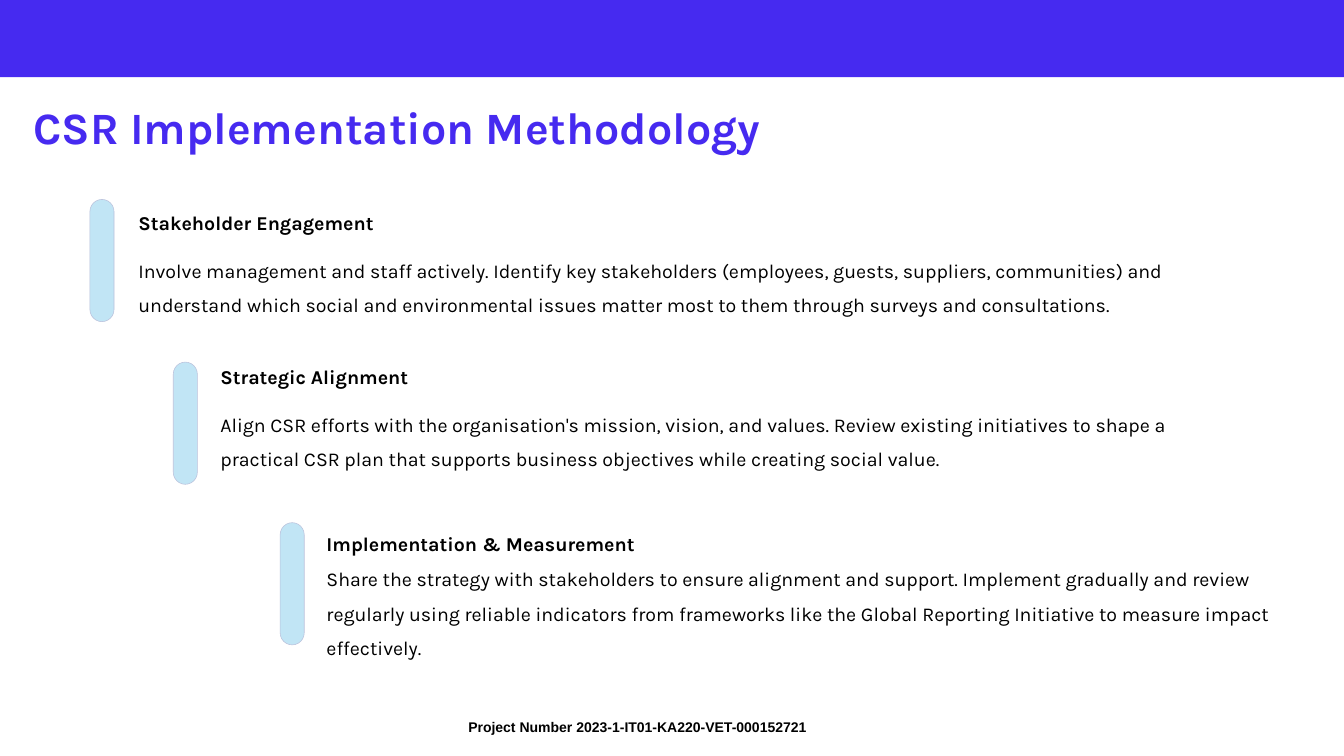
from dataclasses import dataclass

from pptx import Presentation
from pptx import util as u
from pptx.dml.color import RGBColor
from pptx.enum import shapes, text
from pptx.util import Cm, Pt


@dataclass(frozen=True)
class Theme:
    accent: RGBColor = RGBColor(0x46, 0x2A, 0xF0)
    bar: RGBColor = RGBColor(0xC1, 0xE5, 0xF5)
    bar_line: RGBColor = RGBColor(0xBB, 0xC2, 0xDC)
    ink: RGBColor = RGBColor(0, 0, 0)
    font: str = "Karla"
    footer_font: str = "Arial"
    title_size: u.Length = Pt(48)
    text_size: u.Length = Pt(21)
    footer_size: u.Length = Pt(15)
    heading_spacing: u.Length = Pt(37.5)
    body_spacing: u.Length = Pt(36.8)


@dataclass(frozen=True)
class Step:
    """One step of the staircase; lengths in centimetres."""
    heading: str
    body: str
    left: float
    top: float
    width: float
    body_drop: float
    bar_left: float
    bar_top: float


THEME = Theme()
SLIDE_W, SLIDE_H = 50.8, 28.58
BAR_W, BAR_H = 0.91, 4.62
HEADING_H, BODY_H = 1.35, 3.91

STEPS = [
    Step("Stakeholder Engagement",
         "Involve management and staff actively. Identify key stakeholders "
         "(employees, guests, suppliers, communities) and understand which "
         "social and environmental issues matter most to them through surveys "
         "and consultations.",
         5.23, 7.54, 38.74, 1.83, 3.4, 7.54),
    Step("Strategic Alignment",
         "Align CSR efforts with the organisation's mission, vision, and "
         "values. Review existing initiatives to shape a practical CSR plan "
         "that supports business objectives while creating social value.",
         8.33, 13.36, 37.16, 1.83, 6.55, 13.69),
    Step("Implementation & Measurement",
         "Share the strategy with stakeholders to ensure alignment and "
         "support. Implement gradually and review regularly using reliable "
         "indicators from frameworks like the Global Reporting Initiative to "
         "measure impact effectively.",
         12.34, 19.69, 37.16, 1.34, 10.59, 19.76),
]


def add_run(p, words: str, size: u.Length, color: RGBColor,
            bold: bool = False, font: str = THEME.font) -> None:
    r = p.add_run()
    r.text = words
    r.font.name = font
    r.font.size = size
    r.font.bold = bold
    r.font.color.rgb = color


def add_text(s, words: str, left: float, top: float, width: float,
             height: float, spacing: u.Length, bold: bool = False) -> None:
    tf = s.shapes.add_textbox(Cm(left), Cm(top), Cm(width), Cm(height)).text_frame
    tf.word_wrap = True
    tf.margin_left = tf.margin_top = tf.margin_right = tf.margin_bottom = 0
    p = tf.paragraphs[0]
    p.line_spacing = spacing
    add_run(p, words, THEME.text_size, THEME.ink, bold)


def add_step(s, step: Step) -> None:
    sp = s.shapes.add_shape(shapes.MSO_SHAPE.ROUNDED_RECTANGLE,
                            Cm(step.bar_left), Cm(step.bar_top),
                            Cm(BAR_W), Cm(BAR_H))
    sp.adjustments[0] = 0.5
    sp.shadow.inherit = False
    sp.fill.solid()
    sp.fill.fore_color.rgb = THEME.bar
    sp.line.color.rgb = THEME.bar_line
    sp.line.width = Pt(0.6)
    add_text(s, step.heading, step.left, step.top, step.width, HEADING_H,
             THEME.heading_spacing, bold=True)
    add_text(s, step.body, step.left, step.top + step.body_drop, step.width,
             BODY_H, THEME.body_spacing)


def add_banner(s) -> None:
    sp = s.shapes.add_shape(shapes.MSO_SHAPE.RECTANGLE, 0, 0,
                            Cm(SLIDE_W), Cm(2.92))
    sp.shadow.inherit = False
    sp.fill.solid()
    sp.fill.fore_color.rgb = THEME.accent
    sp.line.fill.background()


def add_title(s, words: str) -> None:
    sp = s.shapes.title
    sp.left, sp.top, sp.width, sp.height = Cm(1), Cm(3.05), Cm(43.82), Cm(3.71)
    tf = sp.text_frame
    tf.auto_size = text.MSO_AUTO_SIZE.NONE
    tf.vertical_anchor = text.MSO_ANCHOR.MIDDLE
    p = tf.paragraphs[0]
    p.alignment = text.PP_ALIGN.LEFT
    p.line_spacing = 0.9
    add_run(p, words, THEME.title_size, THEME.accent, bold=True)


def add_footer(s, words: str) -> None:
    tf = s.shapes.add_textbox(Cm(17.45), Cm(27.05), Cm(13.49), Cm(0.89)).text_frame
    tf.word_wrap = False
    tf.auto_size = text.MSO_AUTO_SIZE.SHAPE_TO_FIT_TEXT
    add_run(tf.paragraphs[0], words, THEME.footer_size, THEME.ink,
            bold=True, font=THEME.footer_font)


def main() -> None:
    prs = Presentation()
    prs.slide_width, prs.slide_height = Cm(SLIDE_W), Cm(SLIDE_H)
    s = prs.slides.add_slide(prs.slide_layouts.get_by_name("Title Only"))

    # Frame: footer, banner and title
    add_footer(s, "Project Number 2023-1-IT01-KA220-VET-000152721")
    add_banner(s)
    add_title(s, "CSR Implementation Methodology")

    # Staircase of steps
    for step in STEPS:
        add_step(s, step)

    prs.save("out.pptx")


if __name__ == "__main__":
    main()
